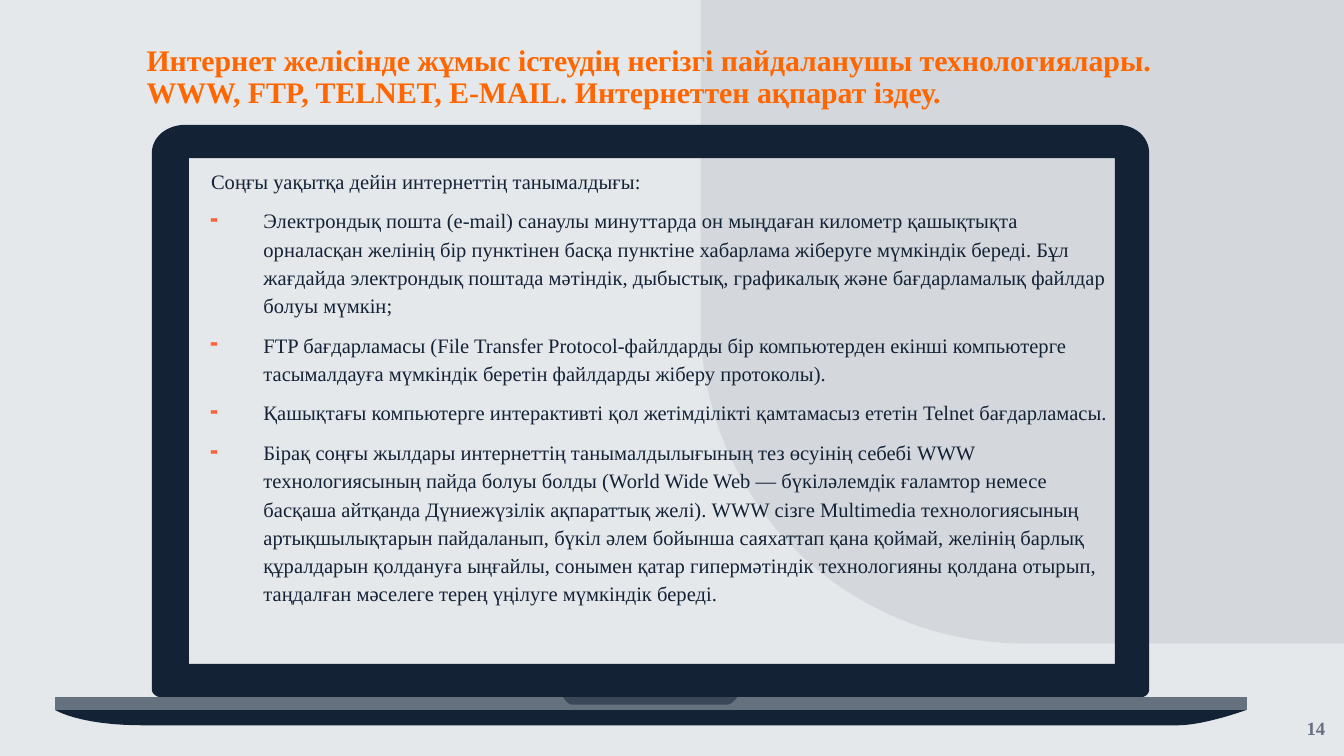
from lxml.etree import SubElement
from pptx import Presentation
from pptx.dml.color import RGBColor
from pptx.enum.shapes import MSO_SHAPE
from pptx.enum.text import MSO_ANCHOR, MSO_AUTO_SIZE, PP_ALIGN
from pptx.oxml.ns import qn
from pptx.util import Cm, Pt

FONT = "Times New Roman"
NAVY, GREY, PALE = "142236", "667180", "E5E8EB"


def paint(fill, colour):
    fill.solid()
    fill.fore_color.rgb = RGBColor.from_string(colour)


def finish(shape, colour, alpha=100):
    """Flat fill without line or shadow; alpha in percent."""
    paint(shape.fill, colour)
    shape.line.fill.background()
    shape.shadow.inherit = False
    if alpha < 100:
        colour_element = shape._element.find(".//" + qn("a:srgbClr"))
        SubElement(colour_element, qn("a:alpha"), val=str(alpha * 1000))


presentation = Presentation()
presentation.slide_width, presentation.slide_height = Cm(25.4), Cm(14.29)
slide = presentation.slides.add_slide(presentation.slide_layouts[5])
shapes = slide.shapes
paint(slide.background.fill, PALE)

# Background: large tinted panel and page-number corner
for left, top, size, rotation, colour, alpha in [
    (13.24, 0, 12.16, 180, NAVY, 8),
    (24.34, 13.23, 1.06, 270, PALE, 100),
]:
    panel = shapes.add_shape(MSO_SHAPE.ROUND_1_RECTANGLE,
                             Cm(left), Cm(top), Cm(size), Cm(size))
    panel.adjustments[0] = 0.5
    panel.rotation = rotation
    finish(panel, colour, alpha)

# Laptop: each contour lists line ends (x, y) and Bezier curves (three points)
screen = [
    [(21.11, 2.36), (3.51, 2.36), (3.15, 2.36, 2.87, 2.59, 2.87, 2.9),
     (2.87, 13.03), (2.87, 13.12, 2.97, 13.19, 3.1, 13.19),
     (21.51, 13.19), (21.64, 13.19, 21.72, 13.12, 21.72, 13.03),
     (21.72, 2.9), (21.72, 2.59, 21.46, 2.36, 21.11, 2.36)],
    [(21.07, 12.55), (3.57, 12.55), (3.57, 2.99), (21.07, 2.99)],
]
foot = [[(1.04, 13.42), (1.04, 13.42, 1.5, 13.71, 2.67, 13.71),
         (22.28, 13.71), (22.76, 13.71, 23.56, 13.42, 23.56, 13.42)]]
base = [[(1.04, 13.42), (23.56, 13.42), (23.56, 13.17), (1.04, 13.17)]]
notch = [[(10.64, 13.17), (10.64, 13.17, 10.72, 13.32, 10.82, 13.32),
          (13.74, 13.32), (13.84, 13.32, 13.94, 13.17, 13.94, 13.17)]]
STEPS = 12
for contours, colour, alpha in [(screen, NAVY, 100), (foot, NAVY, 100),
                                (base, GREY, 100), (notch, NAVY, 53)]:
    builder = None
    for contour in contours:
        points = [contour[0]]
        for segment in contour[1:]:
            if len(segment) == 2:
                points.append(segment)
                continue
            start = points[-1]
            for step in range(1, STEPS + 1):
                t = step / STEPS
                u = 1 - t
                points.append(tuple(
                    u**3 * start[i] + 3 * u * u * t * segment[i]
                    + 3 * u * t * t * segment[i + 2] + t**3 * segment[i + 4]
                    for i in (0, 1)))
        points = [(Cm(x), Cm(y)) for x, y in points]
        if builder is None:
            builder = shapes.build_freeform(*points[0], scale=1.0)
        else:
            builder.move_to(*points[0])
        builder.add_line_segments(points[1:], close=True)
    finish(builder.convert_to_shape(), colour, alpha)

# Text boxes; the title placeholder goes in front of the background
title = shapes.title
number = shapes.add_textbox(0, 0, 0, 0)
body = shapes.add_textbox(0, 0, 0, 0)
shapes._spTree.append(title._element)

body_texts = [
    "Соңғы уақытқа дейін интернеттің танымалдығы:",
    "Электрондық пошта (e-mail) санаулы минуттарда он мыңдаған километр қашықтықта "
    "орналасқан желінің бір пунктінен басқа пунктіне хабарлама жіберуге мүмкіндік "
    "береді. Бұл жағдайда электрондық поштада мәтіндік, дыбыстық, графикалық және "
    "бағдарламалық файлдар болуы мүмкін;",
    "FTP бағдарламасы (File Transfer Protocol-файлдарды бір компьютерден екінші "
    "компьютерге тасымалдауға мүмкіндік беретін файлдарды жіберу протоколы).",
    "Қашықтағы компьютерге интерактивті қол жетімділікті қамтамасыз ететін Telnet "
    "бағдарламасы.",
    "Бірақ соңғы жылдары интернеттің танымалдылығының тез өсуінің себебі WWW "
    "технологиясының пайда болуы болды (World Wide Web — бүкіләлемдік ғаламтор "
    "немесе басқаша айтқанда Дүниежүзілік ақпараттық желі). WWW сізге Multimedia "
    "технологиясының артықшылықтарын пайдаланып, бүкіл әлем бойынша саяхаттап қана "
    "қоймай, желінің барлық құралдарын қолдануға ыңғайлы, сонымен қатар "
    "гипермәтіндік технологияны қолдана отырып, таңдалған мәселеге терең үңілуге "
    "мүмкіндік береді.",
]
title_text = ("Интернет желісінде жұмыс істеудің негізгі пайдаланушы технологиялары. "
              "WWW, FTP, TELNET, E-MAIL. Интернеттен ақпарат іздеу.")

for shape, box, anchor, align, spacing, size, colour, bold, texts in [
    (number, (24.34, 13.23, 1.06, 1.06), MSO_ANCHOR.MIDDLE, PP_ALIGN.CENTER,
     1.0, 10, GREY, True, ["14"]),
    (body, (3.71, 3.12, 17.4, 9.14), MSO_ANCHOR.TOP, PP_ALIGN.LEFT,
     1.15, 11, NAVY, False, body_texts),
    (title, (2.77, 0, 19.13, 2.08), MSO_ANCHOR.BOTTOM, PP_ALIGN.LEFT,
     0.9, 16, "FF6600", True, [title_text]),
]:
    shape.left, shape.top, shape.width, shape.height = map(Cm, box)
    frame = shape.text_frame
    frame.word_wrap = True
    frame.auto_size = MSO_AUTO_SIZE.NONE
    frame.vertical_anchor = anchor
    frame.margin_left = frame.margin_right = frame.margin_top = frame.margin_bottom = 0
    for index, text in enumerate(texts):
        paragraph = frame.add_paragraph() if index else frame.paragraphs[0]
        paragraph.alignment = align
        paragraph.line_spacing = spacing
        paragraph.space_before = Pt(6 if index else 0)
        run = paragraph.add_run()
        run.text = text
        run.font.name, run.font.size, run.font.bold = FONT, Pt(size), bold
        paint(run.font.fill, colour)

# Body indents and orange dash bullets
for index, paragraph in enumerate(body.text_frame.paragraphs):
    properties = paragraph._p.get_or_add_pPr()
    properties.set("marL", str(Cm(1.27 if index else 0.28)))
    properties.set("indent", str(Cm(-0.99 if index else 0)))
    if index:
        bullet_colour = SubElement(properties, qn("a:buClr"))
        SubElement(bullet_colour, qn("a:srgbClr"), val="FF6035")
        SubElement(properties, qn("a:buFont"), typeface=FONT)
        SubElement(properties, qn("a:buChar"), char="╸")

presentation.save("out.pptx")
